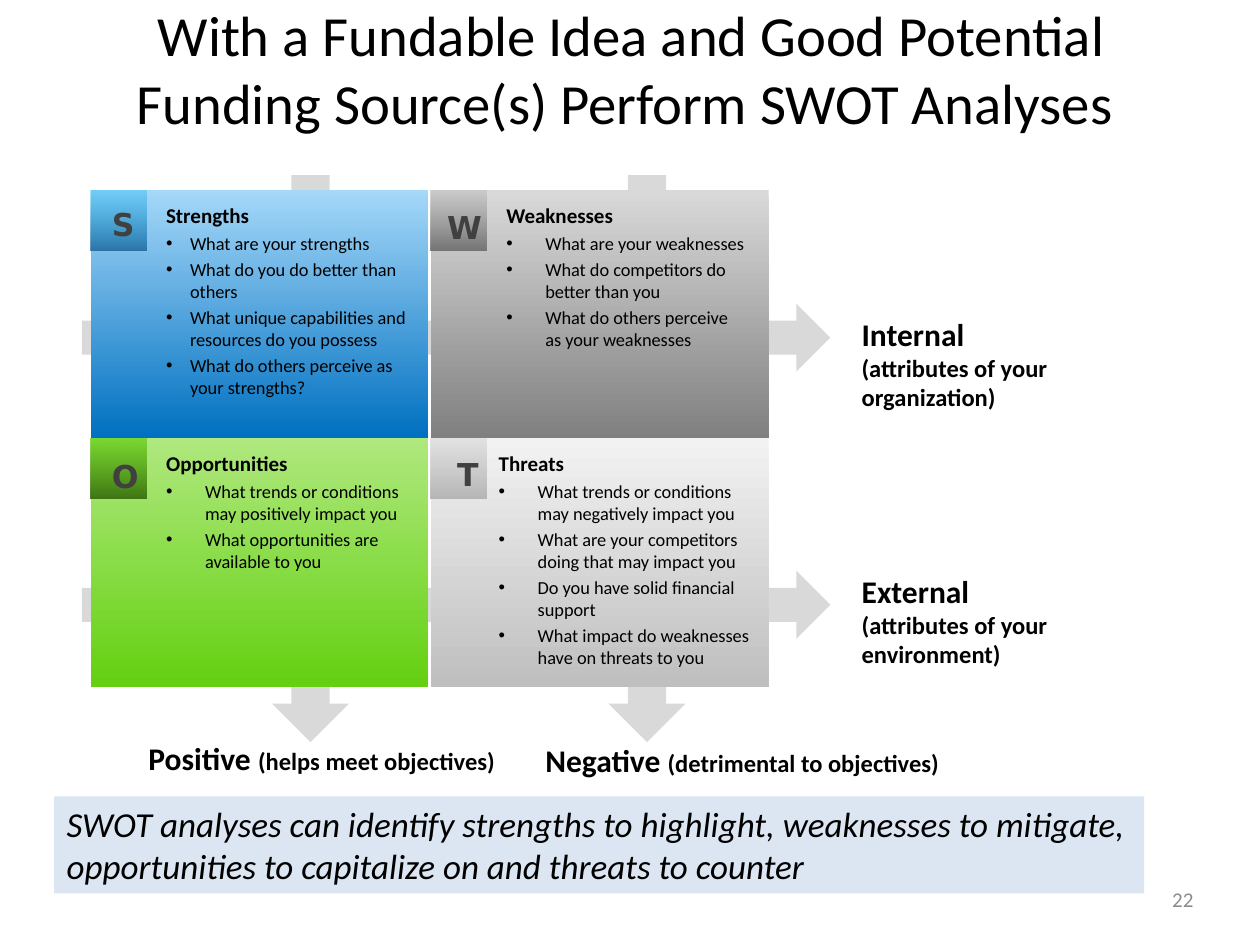
import lxml.etree
import pptx
import pptx.dml.color
import pptx.enum.shapes
import pptx.enum.text
import pptx.oxml.ns
import pptx.util

Inches = pptx.util.Inches
Shapes = pptx.enum.shapes.MSO_SHAPE
Align = pptx.enum.text.PP_ALIGN
Anchor = pptx.enum.text.MSO_ANCHOR
qn = pptx.oxml.ns.qn

QUADRANTS = [
    dict(letter="S", heading="Strengths", column=0, row=0, fill=("A5D8F9", "0070C0"),
         badge=("00B0F0", "004C84"), alphas=(30, 65), letter_box=(0.07, 0.07, 0.3),
         text_left=0.5, text_width=2.1, indent=0.19,
         bullets=["What are your strengths", "What do you do better than others",
                  "What unique capabilities and resources do you possess",
                  "What do others perceive as your strengths?"]),
    dict(letter="W", heading="Weaknesses", column=1, row=0, fill=("D9D9D9", "808080"),
         badge=("BFBFBF", "595959"), alphas=(58, 74), letter_box=(0.03, 0.09, 0.36),
         text_left=0.5, text_width=2.1, indent=0.31,
         bullets=["What are your weaknesses", "What do competitors do better than you",
                  "What do others perceive as your weaknesses"]),
    dict(letter="O", heading="Opportunities", column=0, row=1, fill=("AFE87E", "64D011"),
         badge=("64D011", "326609"), alphas=(70, 88), letter_box=(0.07, 0.1, 0.3),
         text_left=0.5, text_width=2.1, indent=0.31,
         bullets=["What trends or conditions may positively impact you",
                  "What opportunities are available to you"]),
    dict(letter="T", heading="Threats", column=1, row=1, fill=("F2F2F2", "BFBFBF"),
         badge=("D9D9D9", "A6A6A6"), alphas=(66, 75), letter_box=(0.11, 0.08, 0.3),
         text_left=0.44, text_width=2.23, indent=0.31,
         bullets=["What trends or conditions may negatively impact you",
                  "What are your competitors doing that may impact you",
                  "Do you have solid financial support",
                  "What impact do weaknesses have on threats to you"]),
]


def rgb(value):
    """Turn a hex string into a colour."""
    return pptx.dml.color.RGBColor.from_string(value)


def add_span(para, text, size=12, font="Calibri", color="000000", bold=False, italic=False):
    """Append formatted text to a paragraph."""
    span = para.add_run()
    span.text = text
    span.font.size = pptx.util.Pt(size)
    span.font.name = font
    span.font.bold = bold
    span.font.italic = italic
    span.font.color.rgb = rgb(color)


def add_box(page, left, top, width, height, anchor=Anchor.TOP, align=Align.LEFT):
    """Add a wrapping text box and return its text frame."""
    box = page.shapes.add_textbox(Inches(left), Inches(top), Inches(width), Inches(height))
    frame = box.text_frame
    frame.word_wrap = True
    frame.vertical_anchor = anchor
    frame.paragraphs[0].alignment = align
    return frame


def add_block(page, left, top, width, height, kind=Shapes.RECTANGLE, fill=None):
    """Add a borderless shape with an optional solid fill."""
    block = page.shapes.add_shape(kind, Inches(left), Inches(top), Inches(width), Inches(height))
    block.shadow.inherit = False
    block.line.fill.background()
    if fill:
        block.fill.solid()
        block.fill.fore_color.rgb = rgb(fill)
    return block


def add_gradient_block(page, left, top, width, height, colors, alphas=(100, 100)):
    """Add a rectangle shaded from top to bottom."""
    block = add_block(page, left, top, width, height)
    block.fill.gradient()
    block.fill.gradient_angle = 270
    for stop, color, position in zip(block.fill.gradient_stops, colors, (0, 1)):
        stop.color.rgb = rgb(color)
        stop.position = position
    for node, alpha in zip(block.element.spPr.iter(qn("a:srgbClr")), alphas):
        if alpha < 100:
            lxml.etree.SubElement(node, qn("a:alpha"), val=str(alpha * 1000))


def add_bullet(frame, text, indent):
    """Append a bulleted paragraph with a hanging indent."""
    para = frame.add_paragraph()
    para.space_before = pptx.util.Pt(2.3)
    props = para._p.get_or_add_pPr()
    props.set("marL", str(Inches(indent)))
    props.set("indent", str(-Inches(indent)))
    lxml.etree.SubElement(props, qn("a:buFont"), typeface="Arial")
    lxml.etree.SubElement(props, qn("a:buChar"), char="•")
    add_span(para, text, size=10.5)


def add_arrows(page, left, top):
    """Place the two rightward and two downward arrows behind the matrix."""
    length, thickness = 5.94, 0.54
    for offset in (3.14, 1.02):
        arrow = add_block(page, left + (length - thickness) / 2, top + offset - (length - thickness) / 2,
                          thickness, length, Shapes.DOWN_ARROW, "D9D9D9")
        arrow.rotation = 270
    for offset in (4.18, 1.51):
        add_block(page, left + offset, top, 0.61, 4.5, Shapes.DOWN_ARROW, "D9D9D9")


def add_quadrant(page, left, top, width, height, part):
    """Place one quadrant with its bullets and letter badge."""
    add_gradient_block(page, left, top, width, height, part["fill"])
    frame = add_box(page, left + part["text_left"], top + 0.05, part["text_width"], height - 0.1)
    add_span(frame.paragraphs[0], part["heading"], bold=True)
    for text in part["bullets"]:
        add_bullet(frame, text, part["indent"])
    add_gradient_block(page, left, top, 0.44, 0.48, part["badge"], part["alphas"])
    across, down, letter_width = part["letter_box"]
    align = Align.LEFT if part["letter"] == "T" else Align.CENTER
    letter = add_box(page, left + across, top + down, letter_width, 0.4, align=align)
    add_span(letter.paragraphs[0], part["letter"], size=18, font="DejaVu Sans",
             color="404040", bold=True)


def add_matrix(page, left, top):
    """Place the four quadrants in a two by two grid."""
    width, height, gap = 2.68, 1.97, 0.02
    for part in QUADRANTS:
        add_quadrant(page, left + part["column"] * (width + gap), top + part["row"] * height,
                     width, height, part)


def add_axis_label(page, left, top, width, height, name, detail):
    """Place an axis name followed by its smaller explanation."""
    para = add_box(page, left, top, width, height).paragraphs[0]
    add_span(para, name, size=18, bold=True)
    add_span(para, detail, size=14, bold=True)


def add_banner(page, left, top, width, height):
    """Place the tinted conclusion banner."""
    frame = add_block(page, left, top, width, height, fill="DCE6F2").text_frame
    frame.word_wrap = True
    frame.vertical_anchor = Anchor.TOP
    frame.paragraphs[0].alignment = Align.LEFT
    add_span(frame.paragraphs[0], "SWOT analyses can identify strengths to highlight, weaknesses to "
             "mitigate, opportunities to capitalize on and threats to counter", size=20, italic=True)


def main():
    """Build and save the slide."""
    deck = pptx.Presentation()
    deck.slide_width, deck.slide_height = Inches(10), Inches(7.5)
    page = deck.slides.add_slide(deck.slide_layouts[6])
    title = add_box(page, 0.51, 0, 9, 1.08, Anchor.MIDDLE, Align.CENTER)
    add_span(title.paragraphs[0], "With a Fundable Idea and Good Potential Funding Source(s) "
             "Perform SWOT Analyses ", size=32.4)
    number = add_box(page, 7.24, 6.94, 2.33, 0.4, Anchor.MIDDLE, Align.RIGHT)
    add_span(number.paragraphs[0], "22", color="8C8C8C")
    add_arrows(page, 0.65, 1.39)
    add_matrix(page, 0.72, 1.51)
    add_axis_label(page, 1.08, 5.82, 3.08, 0.4, "Positive ", "(helps meet objectives)")
    add_axis_label(page, 4.23, 5.83, 3.4, 0.4, "Negative ", "(detrimental to objectives)")
    add_axis_label(page, 6.74, 2.45, 1.77, 0.88, "Internal ", "(attributes of your organization)")
    add_axis_label(page, 6.74, 4.49, 1.79, 0.88, "External ", "(attributes of your environment)")
    add_banner(page, 0.43, 6.32, 8.65, 0.77)
    deck.save("out.pptx")


if __name__ == "__main__":
    main()
